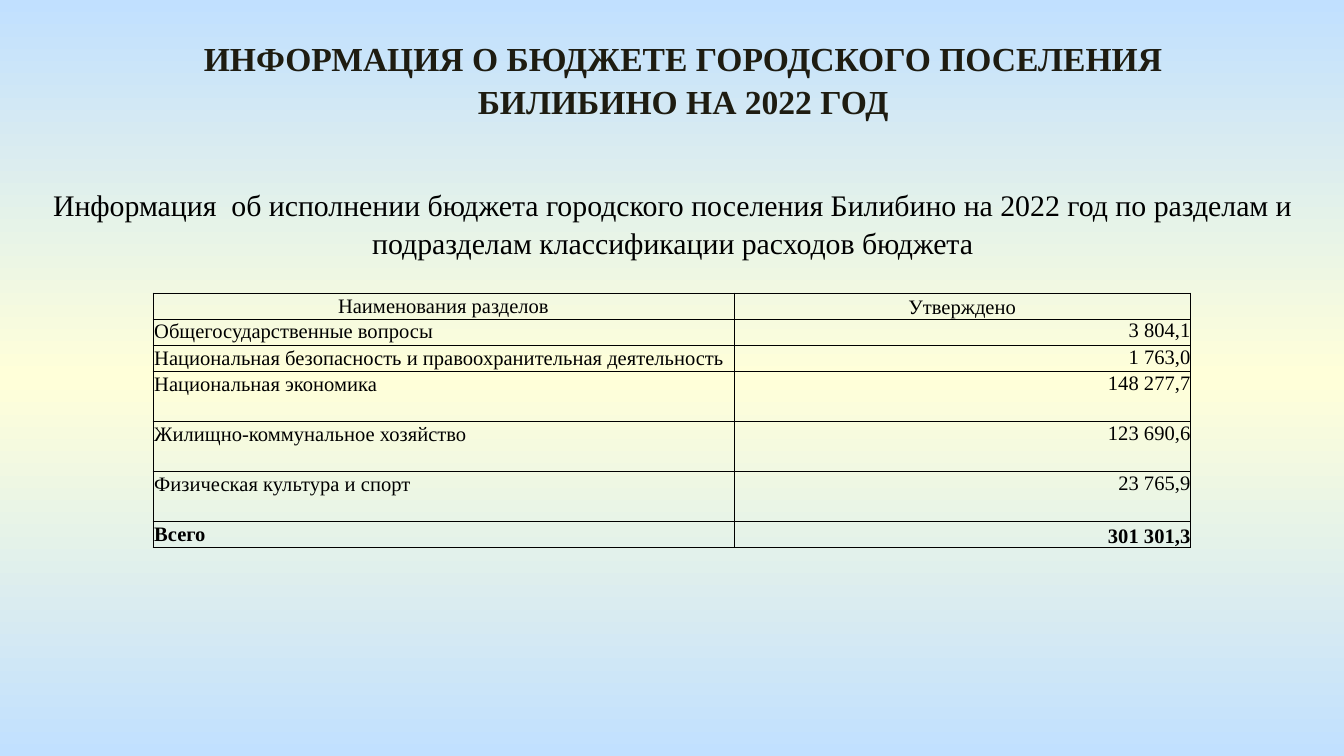
from copy import deepcopy

from lxml.etree import SubElement
from pptx import Presentation
from pptx.dml.color import RGBColor
from pptx.enum.text import MSO_ANCHOR, MSO_AUTO_SIZE, PP_ALIGN
from pptx.oxml.ns import qn
from pptx.util import Pt

COLORS = {"sky": "C1E0FF", "cream": "FFFFD9", "title": "1E1C11", "black": "000000"}
FONT = "Times New Roman"
TITLE = "ИНФОРМАЦИЯ О БЮДЖЕТЕ ГОРОДСКОГО ПОСЕЛЕНИЯ БИЛИБИНО НА 2022 ГОД"
SUBTITLE = (
    "Информация  об исполнении бюджета городского поселения Билибино на 2022 год "
    "по разделам и подразделам классификации расходов бюджета"
)
BUDGET = [
    ("Наименования разделов", "Утверждено"),
    ("Общегосударственные вопросы", "3 804,1"),
    ("Национальная безопасность и правоохранительная деятельность", "1 763,0"),
    ("Национальная экономика", "148 277,7"),
    ("Жилищно-коммунальное хозяйство", "123 690,6"),
    ("Физическая культура и спорт", "23 765,9"),
    ("Всего", "301 301,3"),
]
COLUMN_SHARES = [0.56, 0.44]
ROW_HEIGHTS = [13.9, 14.4, 13.5, 26.8, 26.8, 26.8, 13.9]


def add_text(frame, text, size, color, align, bold=False):
    para = frame.paragraphs[0]
    para.alignment = align
    span = para.add_run()
    span.text = text
    span.font.name = FONT
    span.font.size = Pt(size)
    span.font.bold = bold
    span.font.color.rgb = RGBColor.from_string(COLORS[color])
    return para


def paint_background(page):
    fill = page.background.fill
    fill.gradient()
    fill.gradient_angle = 270
    stop_list = page.element.find(".//" + qn("a:gsLst"))
    stop_list.insert(1, deepcopy(stop_list[0]))
    for stop, position, color in zip(fill.gradient_stops, (0, 0.5, 1), ("sky", "cream", "sky")):
        stop.position = position
        stop.color.rgb = RGBColor.from_string(COLORS[color])


def fill_heading(shape, box, text, size, color, bold=False):
    shape.left, shape.top, shape.width, shape.height = (Pt(length) for length in box)
    frame = shape.text_frame
    frame.word_wrap = True
    frame.auto_size = MSO_AUTO_SIZE.SHAPE_TO_FIT_TEXT
    frame.vertical_anchor = MSO_ANCHOR.TOP
    para = add_text(frame, text, size, color, PP_ALIGN.CENTER, bold)
    para.line_spacing = 1.07
    para.space_before = Pt(0)


def outline_cell(cell):
    properties = cell._tc.get_or_add_tcPr()
    for side in ("a:lnL", "a:lnR", "a:lnT", "a:lnB"):
        line = SubElement(properties, qn(side), w=str(Pt(0.5)))
        solid = SubElement(line, qn("a:solidFill"))
        SubElement(solid, qn("a:srgbClr"), val=COLORS["black"])


def add_budget_table(page, box):
    left, top, width, height = box
    table = page.shapes.add_table(
        len(BUDGET), len(COLUMN_SHARES), Pt(left), Pt(top), Pt(width), Pt(height)
    ).table
    table.first_row = False
    table.horz_banding = False
    for column, share in zip(table.columns, COLUMN_SHARES):
        column.width = Pt(width * share)
    for row, row_height in zip(table.rows, ROW_HEIGHTS):
        row.height = Pt(row_height)

    last = len(BUDGET) - 1
    for row_index, values in enumerate(BUDGET):
        for column_index, value in enumerate(values):
            cell = table.cell(row_index, column_index)
            is_header = row_index == 0
            is_amount = column_index == 1 and not is_header
            inset = Pt(0 if is_amount else 0.6)
            cell.margin_left = cell.margin_right = cell.margin_top = inset
            cell.margin_bottom = Pt(0)
            cell.vertical_anchor = MSO_ANCHOR.TOP
            if column_index == 1 and row_index in (0, last):
                cell.vertical_anchor = MSO_ANCHOR.BOTTOM
            elif is_header:
                cell.vertical_anchor = MSO_ANCHOR.MIDDLE
            align = PP_ALIGN.RIGHT if is_amount else PP_ALIGN.LEFT
            if is_header:
                align = PP_ALIGN.CENTER
            add_text(cell.text_frame, value, 11, "black", align, row_index == last)
            outline_cell(cell)
            cell.fill.background()


def build_budget_page(deck):
    page = deck.slides.add_slide(deck.slide_layouts[5])
    paint_background(page)
    fill_heading(page.shapes.title, (87.8, 15.1, 556.6, 51.1), TITLE, 18, "title", True)
    subtitle = page.shapes.add_textbox(0, 0, 0, 0)
    fill_heading(subtitle, (0.5, 95, 720, 46.1), SUBTITLE, 16, "black")
    add_budget_table(page, (82, 157, 555.7, sum(ROW_HEIGHTS)))


def main():
    deck = Presentation()
    deck.slide_width = Pt(720)
    deck.slide_height = Pt(405)
    build_budget_page(deck)
    deck.save("out.pptx")


if __name__ == "__main__":
    main()
